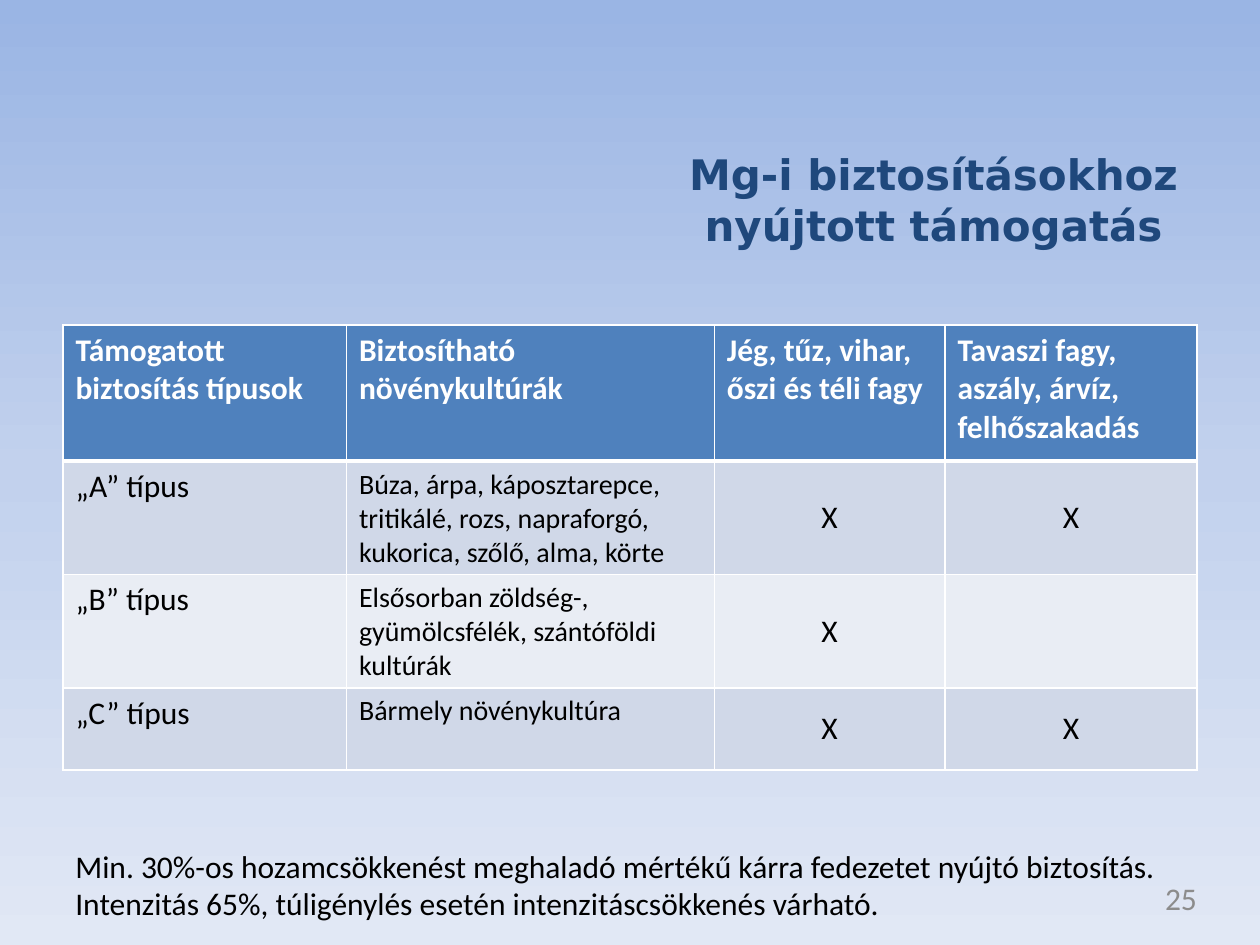
from lxml.etree import SubElement
from pptx import Presentation
from pptx.dml.color import RGBColor
from pptx.enum.text import MSO_ANCHOR as Anchor, PP_ALIGN as Align
from pptx.oxml.ns import qn
from pptx.util import Inches, Pt

# Content
TITLE = "Mg-i biztosításokhoz nyújtott támogatás"
HEADER = ["Támogatott biztosítás típusok", "Biztosítható növénykultúrák",
          "Jég, tűz, vihar, őszi és téli fagy",
          "Tavaszi fagy, aszály, árvíz, felhőszakadás"]
ROWS = [
    ["„A” típus", "Búza, árpa, káposztarepce, tritikálé, rozs, napraforgó, "
     "kukorica, szőlő, alma, körte", "X", "X"],
    ["„B” típus", "Elsősorban zöldség-, gyümölcsfélék, szántóföldi kultúrák", "X", ""],
    ["„C” típus", "Bármely növénykultúra", "X", "X"],
]
NOTES = ["Min. 30%-os hozamcsökkenést meghaladó mértékű kárra fedezetet nyújtó biztosítás.",
         "Intenzitás 65%, túligénylés esetén intenzitáscsökkenés várható."]
SLIDE_NUMBER = "25"

# Layout and colours
COLUMN_WIDTHS = [2.25, 2.92, 1.83, 2]
ROW_HEIGHTS = [1.08, 0.9, 0.9, 0.65]
BACKGROUND_STOPS = [(0, "9AB5E4"), (50, "C2D1ED"), (100, "E1E8F5")]
NAVY = RGBColor(0x1F, 0x48, 0x7C)
GREY = RGBColor(0x8C, 0x8C, 0x8C)
BLACK = RGBColor(0, 0, 0)
WHITE = RGBColor(0xFF, 0xFF, 0xFF)
HEADER_BLUE = RGBColor(0x4F, 0x81, 0xBD)
BANDS = [RGBColor(0xD0, 0xD8, 0xE8), RGBColor(0xE9, 0xED, 0xF4)]


def write(frame, *lines, size=18, font="Calibri", color=BLACK, bold=False,
          align=Align.LEFT, margins=None):
    frame.word_wrap = True
    if margins:
        (frame.margin_left, frame.margin_top,
         frame.margin_right, frame.margin_bottom) = map(Inches, margins)
    for index, line in enumerate(lines):
        paragraph = frame.add_paragraph() if index else frame.paragraphs[0]
        paragraph.alignment = align
        run = paragraph.add_run()
        run.text = line
        run.font.size, run.font.name, run.font.bold = Pt(size), font, bold
        run.font.color.rgb = color


def add_text_box(slide, box, *lines, **text_format):
    shape = slide.shapes.add_textbox(*map(Inches, box))
    write(shape.text_frame, *lines, **text_format)


def set_background(slide):
    fill = slide.background.fill
    fill.gradient()
    fill.gradient_angle = 270
    stops = next(slide.element.iter(qn("a:gsLst")))
    for stop in list(stops):
        stops.remove(stop)
    for position, color in BACKGROUND_STOPS:
        stop = SubElement(stops, qn("a:gs"), pos=str(position * 1000))
        SubElement(stop, qn("a:srgbClr"), val=color)


def set_borders(cell, **widths):
    properties = cell._tc.get_or_add_tcPr()
    for index, (side, width) in enumerate(widths.items()):
        line = properties.makeelement(qn(f"a:ln{side}"), {"w": str(Pt(width))})
        fill = SubElement(line, qn("a:solidFill"))
        SubElement(fill, qn("a:srgbClr"), val=str(WHITE))
        properties.insert(index, line)


def add_insurance_table(slide):
    rows = [HEADER, *ROWS]
    table = slide.shapes.add_table(
        len(rows), len(HEADER), Inches(0.5), Inches(2.58),
        Inches(sum(COLUMN_WIDTHS)), Inches(sum(ROW_HEIGHTS))).table
    for column, width in zip(table.columns, COLUMN_WIDTHS):
        column.width = Inches(width)
    for r, (row, height) in enumerate(zip(rows, ROW_HEIGHTS)):
        table.rows[r].height = Inches(height)
        for c, text in enumerate(row):
            cell = table.cell(r, c)
            header, mark = r == 0, r > 0 and c >= 2
            cell.fill.solid()
            cell.fill.fore_color.rgb = HEADER_BLUE if header else BANDS[(r - 1) % 2]
            set_borders(cell, L=1, R=1, T=3 if r == 1 else 1, B=3 if header else 1)
            cell.vertical_anchor = Anchor.MIDDLE if mark else Anchor.TOP
            if text:
                write(cell.text_frame, text, bold=header,
                      size=16 if c == 1 and not header else 18,
                      color=WHITE if header else BLACK,
                      align=Align.CENTER if mark else Align.LEFT)


def main():
    presentation = Presentation()
    presentation.slide_width, presentation.slide_height = Inches(10), Inches(7.5)
    slide = presentation.slides.add_slide(presentation.slide_layouts[5])
    set_background(slide)

    # Title, indented to the right half
    title = slide.shapes.title
    title.left, title.top, title.width, title.height = map(Inches, (2.67, 0.96, 7.25, 1.03))
    frame = title.text_frame
    frame.vertical_anchor = Anchor.TOP
    write(frame, TITLE, size=24, font="DejaVu Sans", color=NAVY, bold=True,
          align=Align.CENTER, margins=(0, 0.22, 0, 0))
    indent = frame.paragraphs[0]._p.get_or_add_pPr()
    indent.set("marL", str(Inches(2.23)))
    indent.set("indent", "0")

    # Slide number, table and notes
    add_text_box(slide, (7.2, 6.98, 2.3, 0.3), SLIDE_NUMBER, color=GREY,
                 align=Align.RIGHT, margins=(0, 0, 0, 0))
    add_insurance_table(slide)
    add_text_box(slide, (0.5, 6.67, 9, 0.71), *NOTES)

    presentation.save("out.pptx")


if __name__ == "__main__":
    main()
